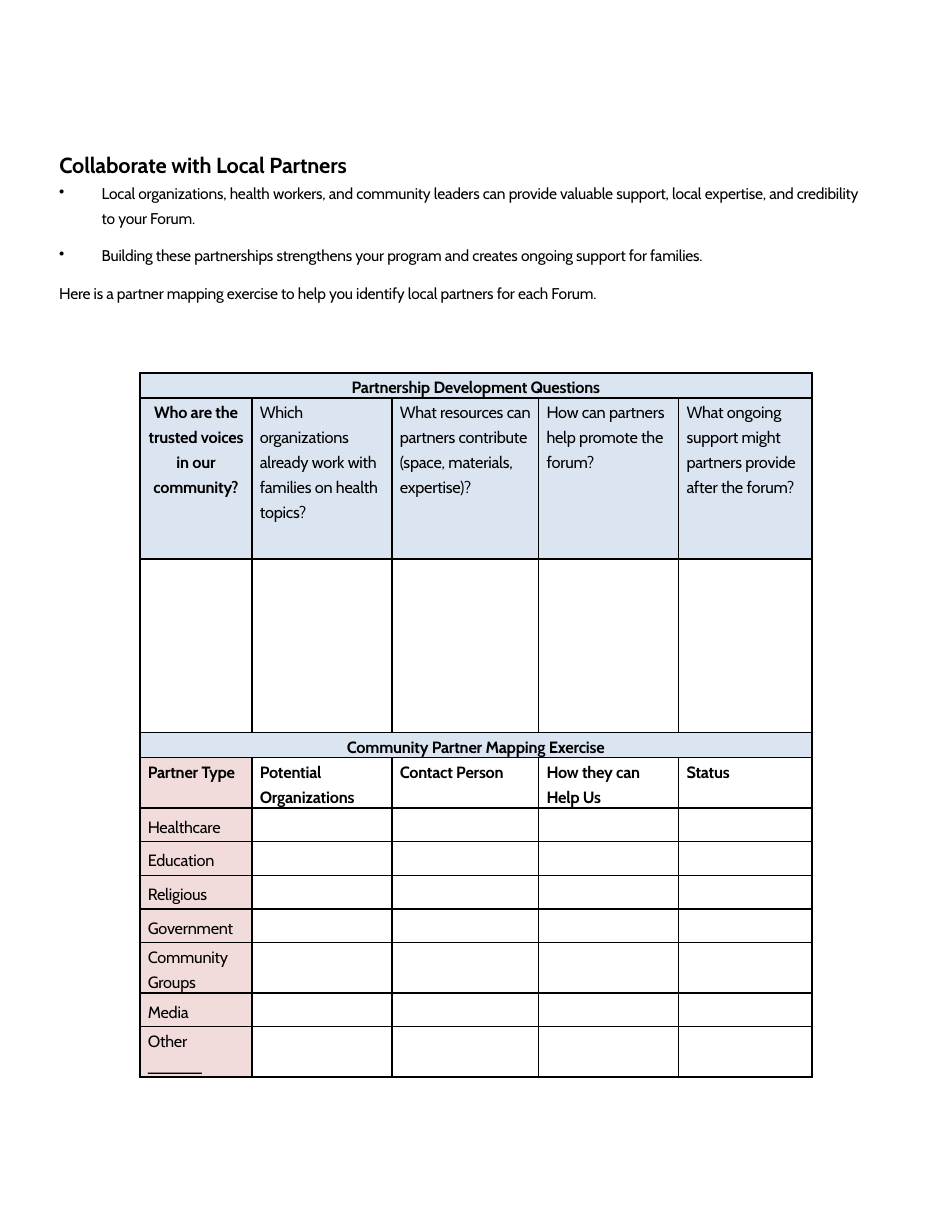
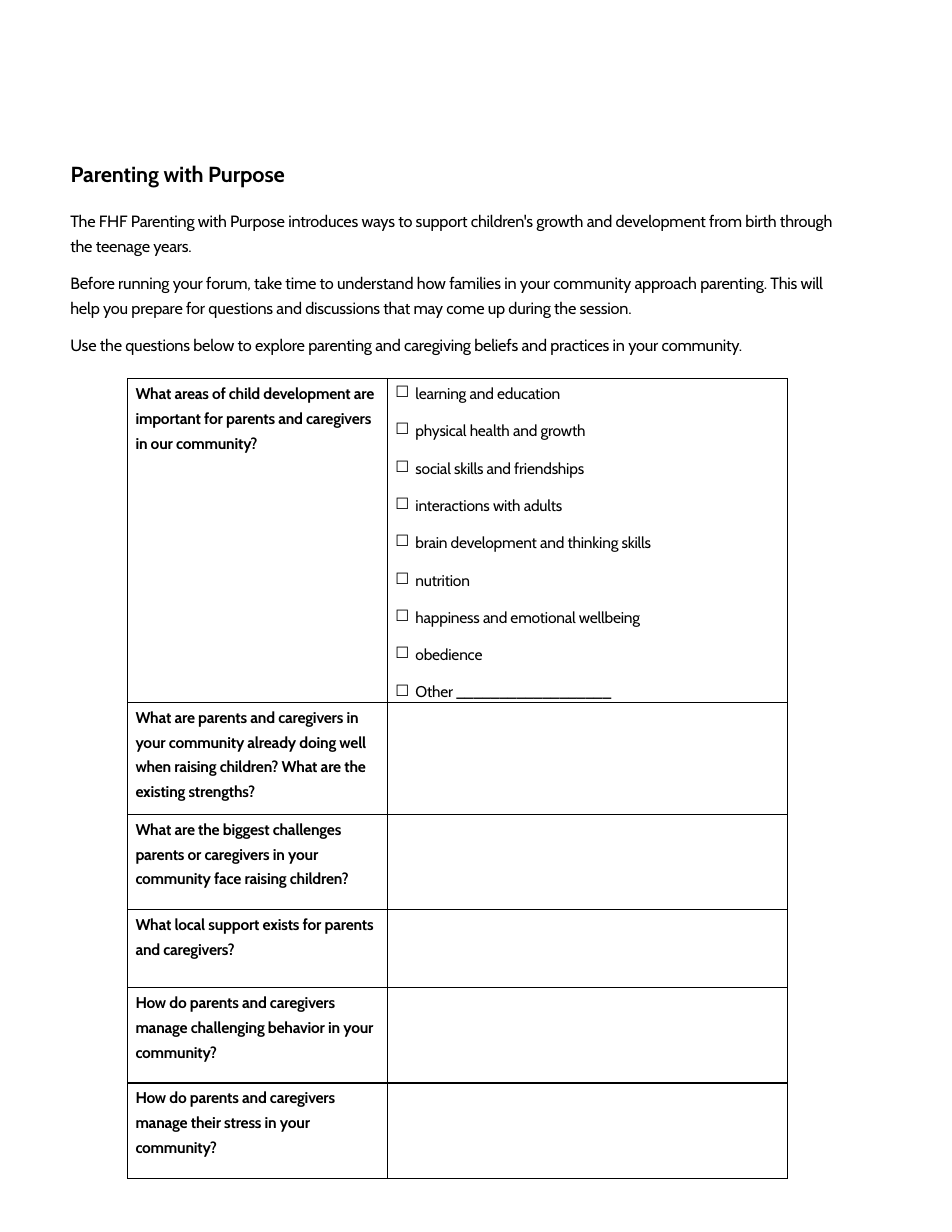
from dataclasses import dataclass

from lxml import etree
from pptx import Presentation
from pptx.dml.color import RGBColor
from pptx.enum.text import MSO_ANCHOR, MSO_AUTO_SIZE, PP_ALIGN
from pptx.oxml.ns import qn
from pptx.util import Inches, Pt

LEFT, CENTER = PP_ALIGN.LEFT, PP_ALIGN.CENTER
TOP, MIDDLE = MSO_ANCHOR.TOP, MSO_ANCHOR.MIDDLE
NO_AUTOFIT, GROW = MSO_AUTO_SIZE.NONE, MSO_AUTO_SIZE.SHAPE_TO_FIT_TEXT
TITLE_ONLY = 5


@dataclass(frozen=True)
class Theme:
    font: str = "Cabin"
    ink: str = "000000"
    blue: str = "DBE5F1"
    pink: str = "F2DBDB"
    title_size: float = 14
    text_size: float = 10.5
    small_size: float = 10
    leading: float = 16
    paragraph_gap: float = 8
    tracking: int = -10  # hundredths of a point
    border: float = 1
    cell_inset: float = 0.07
    title_height: float = 0.32
    line_height: float = 0.22


THEME = Theme()

# Wording of the partners page
PARTNER_POINTS = [
    "Local organizations, health workers, and community leaders can provide valuable support, "
    "local expertise, and credibility to your Forum.",
    "Building these partnerships strengthens your program and creates ongoing support for families.",
]
MAPPING_INTRO = "Here is a partner mapping exercise to help you identify local partners for each Forum."
PARTNER_QUESTIONS = [
    "Who are the trusted voices in our community?",
    "Which organizations already work with families on health topics?",
    "What resources can partners contribute (space, materials, expertise)?",
    "How can partners help promote the forum?",
    "What ongoing support might partners provide after the forum?",
]
MAPPING_HEADINGS = ["Partner Type", "Potential Organizations", "Contact Person",
                    "How they can Help Us", "Status"]
# Partner type and the number of lines its row holds
PARTNER_TYPES = [("Healthcare", 1), ("Education", 1), ("Religious", 1), ("Government", 1),
                 ("Community Groups", 2), ("Media", 1), ("Other ______", 2)]

# Wording of the parenting page
PARENTING_INTRO = [
    "The FHF Parenting with Purpose introduces ways to support children's growth and development "
    "from birth through the teenage years.",
    "Before running your forum, take time to understand how families in your community approach "
    "parenting. This will help you prepare for questions and discussions that may come up during "
    "the session.",
    "Use the questions below to explore parenting and caregiving beliefs and practices in your community.",
]
DEVELOPMENT_AREAS = [
    "learning and education", "physical health and growth", "social skills and friendships",
    "interactions with adults", "brain development and thinking skills", "nutrition",
    "happiness and emotional wellbeing", "obedience", "Other __________________",
]
# Question and its row height
PARENTING_QUESTIONS = [
    ("What areas of child development are important for parents and caregivers in our community?", 2.89),
    ("What are parents and caregivers in your community already doing well when raising children? "
     "What are the existing strengths?", 1),
    ("What are the biggest challenges parents or caregivers in your community face raising children?", 0.85),
    ("What local support exists for parents and caregivers?", 0.7),
    ("How do parents and caregivers manage challenging behavior in your community?", 0.85),
    ("How do parents and caregivers manage their stress in your community?", 0.85),
]


def write_paragraph(paragraph, text, size, bold=False, align=LEFT, bullet=None, indent=0,
                    gap=THEME.paragraph_gap):
    if bullet:
        properties = paragraph._p.get_or_add_pPr()
        properties.set("marL", str(Inches(indent)))
        properties.set("indent", str(-Inches(indent)))
        etree.SubElement(properties, qn("a:buChar")).set("char", bullet)
    paragraph.alignment = align
    paragraph.line_spacing = Pt(THEME.leading)
    paragraph.space_before = Pt(0)
    paragraph.space_after = Pt(gap)
    if not text:
        return
    run = paragraph.add_run()
    run.text = text
    run.font.name = THEME.font
    run.font.size = Pt(size)
    run.font.bold = bold
    run.font.color.rgb = RGBColor.from_string(THEME.ink)
    run._r.get_or_add_rPr().set("spc", str(THEME.tracking))


def next_paragraph(frame, index):
    return frame.add_paragraph() if index else frame.paragraphs[0]


def set_frame(frame, auto_size):
    frame.word_wrap = True
    frame.auto_size = auto_size
    frame.vertical_anchor = TOP
    frame.margin_left = frame.margin_right = Inches(0.1)
    frame.margin_top = frame.margin_bottom = Inches(0.05)


def add_titled_slide(deck, title, left, top, width):
    slide = deck.slides.add_slide(deck.slide_layouts[TITLE_ONLY])
    heading = slide.shapes.title
    heading.left, heading.top = Inches(left), Inches(top)
    heading.width, heading.height = Inches(width), Inches(THEME.title_height)
    set_frame(heading.text_frame, NO_AUTOFIT)
    write_paragraph(heading.text_frame.paragraphs[0], title, THEME.title_size, bold=True, gap=0)
    return slide


def add_body(slide, left, top, width, height, items, size):
    """Each item is a text and its bullet sign, or None for plain text."""
    body = slide.shapes.add_textbox(Inches(left), Inches(top), Inches(width), Inches(height))
    set_frame(body.text_frame, GROW)
    for index, (text, bullet) in enumerate(items):
        write_paragraph(next_paragraph(body.text_frame, index), text, size, bullet=bullet, indent=0.38)


def add_borders(cell):
    properties = cell._tc.get_or_add_tcPr()
    for position, side in enumerate(("a:lnL", "a:lnR", "a:lnT", "a:lnB")):
        line = etree.Element(qn(side), w=str(Pt(THEME.border)))
        fill = etree.SubElement(line, qn("a:solidFill"))
        etree.SubElement(fill, qn("a:srgbClr")).set("val", THEME.ink)
        properties.insert(position, line)


def add_grid(slide, left, top, columns, rows):
    """Add an empty ruled table without fills."""
    frame = slide.shapes.add_table(len(rows), len(columns), Inches(left), Inches(top),
                                   Inches(sum(columns)), Inches(sum(rows)))
    grid = frame.table
    grid.first_row = grid.horz_banding = False
    for column, width in zip(grid.columns, columns):
        column.width = Inches(width)
    for row, height in zip(grid.rows, rows):
        row.height = Inches(height)
    for cell in grid.iter_cells():
        cell.margin_left = cell.margin_right = Inches(THEME.cell_inset)
        cell.margin_top = cell.margin_bottom = 0
        cell.fill.background()
        add_borders(cell)
        write_paragraph(cell.text_frame.paragraphs[0], "", THEME.text_size)
    return grid


def fill_cell(cell, text, size, bold=False, align=LEFT, fill=None, anchor=TOP):
    cell.vertical_anchor = anchor
    if fill:
        cell.fill.solid()
        cell.fill.fore_color.rgb = RGBColor.from_string(fill)
    write_paragraph(cell.text_frame.paragraphs[0], text, size, bold, align)


def add_band(grid, row, text, anchor=TOP):
    first, last = grid.cell(row, 0), grid.cell(row, len(grid.columns) - 1)
    first.merge(last)
    fill_cell(first, text, THEME.text_size, True, CENTER, THEME.blue, anchor)


def build_partners(deck):
    left, top, width = 0.43, 1.32, 7.37
    slide = add_titled_slide(deck, "Collaborate with Local Partners", left, top, width)
    items = [(point, "•") for point in PARTNER_POINTS] + [(MAPPING_INTRO, None)]
    add_body(slide, left, top + THEME.line_height, width, 1.2, items, THEME.small_size)

    line = THEME.line_height
    type_heights = [line if lines == 1 else 0.45 for _, lines in PARTNER_TYPES]
    grid = add_grid(slide, 1.25, 3.33, [1, 1.25, 1.31, 1.25, 1.19],
                    [line, 1.44, 1.55, line, 0.45] + type_heights)

    # Questions, with an empty row for the answers
    add_band(grid, 0, "Partnership Development Questions")
    for column, question in enumerate(PARTNER_QUESTIONS):
        lead = column == 0
        fill_cell(grid.cell(1, column), question, THEME.text_size, lead,
                  CENTER if lead else LEFT, THEME.blue)

    # Mapping exercise
    add_band(grid, 3, "Community Partner Mapping Exercise", MIDDLE)
    for column, heading in enumerate(MAPPING_HEADINGS):
        fill_cell(grid.cell(4, column), heading, THEME.text_size, True,
                  fill=None if column else THEME.pink)
    for row, (partner, _) in enumerate(PARTNER_TYPES, start=5):
        fill_cell(grid.cell(row, 0), partner, THEME.text_size, fill=THEME.pink, anchor=MIDDLE)


def build_parenting(deck):
    left, top, width = 0.53, 1.4, 7.11
    slide = add_titled_slide(deck, "Parenting with Purpose", left, top, width)
    add_body(slide, left, top + 0.39, width, 1.42,
             [(text, None) for text in PARENTING_INTRO], THEME.text_size)

    grid = add_grid(slide, 1.14, 3.38, [2.32, 3.57], [height for _, height in PARENTING_QUESTIONS])
    for row, (question, _) in enumerate(PARENTING_QUESTIONS):
        fill_cell(grid.cell(row, 0), question, THEME.small_size, True)

    # Checklist beside the first question
    checklist = grid.cell(0, 1).text_frame
    for index, area in enumerate(DEVELOPMENT_AREAS):
        write_paragraph(next_paragraph(checklist, index), area, THEME.small_size,
                        bullet="☐", indent=0.18)


def main():
    deck = Presentation()
    deck.slide_width, deck.slide_height = Inches(8.5), Inches(11)
    build_partners(deck)
    build_parenting(deck)
    deck.save("out.pptx")


if __name__ == "__main__":
    main()
